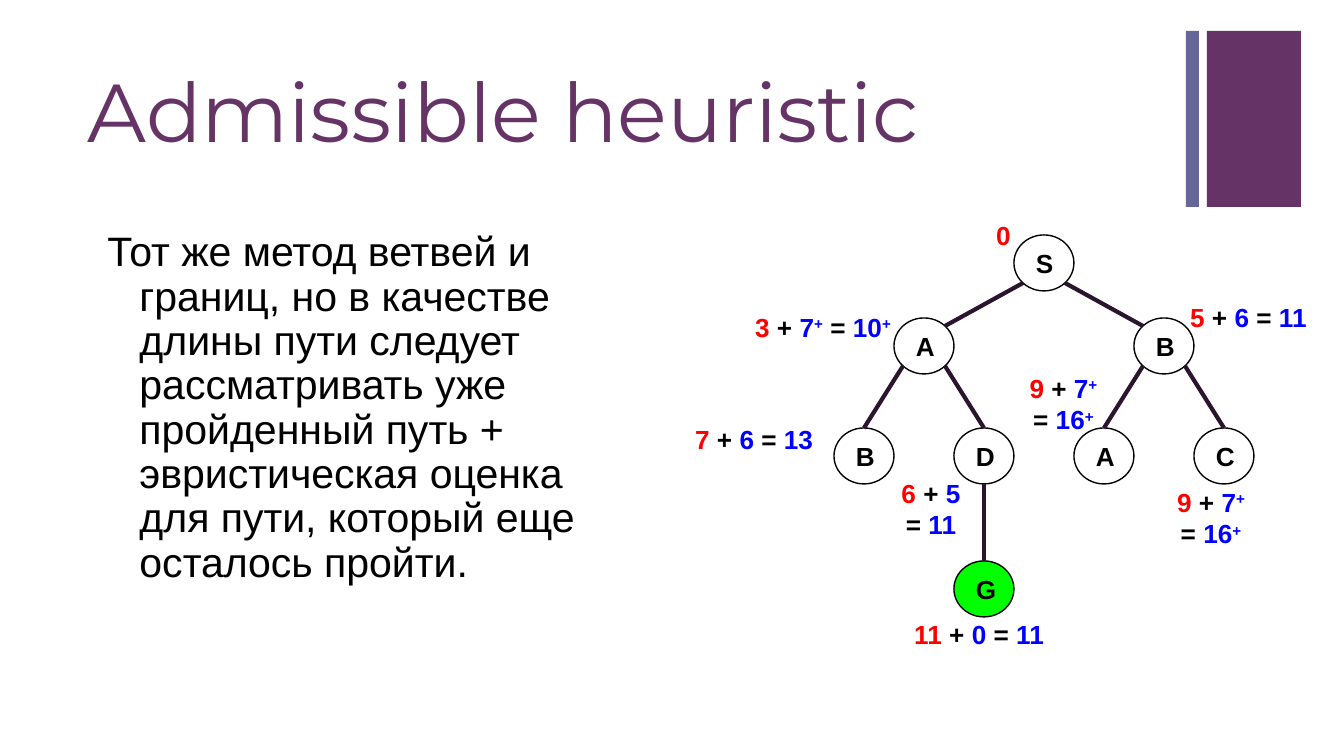
from dataclasses import dataclass

import pptx
import pptx.dml.color
import pptx.enum.shapes
import pptx.enum.text
import pptx.oxml.ns
import pptx.util
from lxml import etree

RGB = pptx.dml.color.RGBColor
PLUM = RGB(0x66, 0x33, 0x66)
SLATE = RGB(0x66, 0x66, 0x99)
EDGE = RGB(0x2B, 0x14, 0x2D)
BLACK = RGB(0, 0, 0)
WHITE = RGB(0xFF, 0xFF, 0xFF)
RED = RGB(0xFF, 0, 0)
BLUE = RGB(0, 0, 0xFF)
GREEN = RGB(0, 0xFF, 0)

SHAPE = pptx.enum.shapes.MSO_SHAPE
ALIGN = pptx.enum.text.PP_ALIGN
ANCHOR = pptx.enum.text.MSO_ANCHOR

EMU_PER_PX = 914400 / 134.4
NODE_W, NODE_H = 60, 56
STEP = 60  # half the gap between neighbouring nodes
LEFT, ROWS = 864, (263, 346, 456, 589)


@dataclass
class Node:
    name: str
    col: int
    row: int
    fill: RGB = WHITE

    @property
    def centre(self) -> tuple[int, int]:
        return LEFT + self.col * STEP, ROWS[self.row]


@dataclass
class Label:
    """Path cost so far, estimate of the rest and their sum."""
    cost: str
    estimate: str
    total: str
    x: int
    y: int
    w: int
    align: ALIGN = ALIGN.LEFT

    def runs(self) -> list[tuple[str, RGB]]:
        if not self.estimate:
            return [(self.cost, RED)]
        runs = [(self.cost, RED), (" + ", BLACK)]
        for value, after in ((self.estimate, " = "), (self.total, "")):
            runs.append((value.rstrip("+"), BLUE))
            if value.endswith("+"):
                runs.append(("+", BLUE))
            if after:
                runs.append((after, BLACK))
        return runs


NODES = [
    Node("S", 3, 0),
    Node("A", 1, 1), Node("B", 5, 1),
    Node("B", 0, 2), Node("D", 2, 2), Node("A", 4, 2), Node("C", 6, 2),
    Node("G", 2, 3, GREEN),
]
EDGES = [(0, 1), (1, 3), (1, 4), (4, 7), (0, 2), (2, 5), (2, 6)]
LABELS = [
    Label("11", "0", "11", 901, 605, 204),
    Label("7", "6", "13", 682, 410, 200),
    Label("6", "5", "11", 881, 464, 100, ALIGN.CENTER),
    Label("9", "7+", "16+", 1009, 359, 109, ALIGN.CENTER),
    Label("9", "7+", "16+", 1156, 473, 110, ALIGN.CENTER),
    Label("3", "7+", "10+", 742, 298, 182),
    Label("5", "6", "11", 1177, 288, 167),
    Label("0", "", "", 983, 206, 60),
]


def px(n: float) -> pptx.util.Emu:
    return pptx.util.Emu(round(n * EMU_PER_PX))


def box(x: int, y: int, w: int, h: int) -> tuple:
    return px(x), px(y), px(w), px(h)


def write(sp, runs, *, size=14, font="Arial", bold=True, align=ALIGN.LEFT,
          anchor=ANCHOR.TOP, spacing=None):
    """Fill a shape with (text, colour) runs; a lone plus is superscript."""
    tf = sp.text_frame
    tf.word_wrap = True
    tf.auto_size = pptx.enum.text.MSO_AUTO_SIZE.NONE
    tf.vertical_anchor = anchor
    tf.margin_left = tf.margin_right = pptx.util.Inches(0.1)
    tf.margin_top = tf.margin_bottom = pptx.util.Inches(0.1)
    p = tf.paragraphs[0]
    p.alignment = align
    p.line_spacing = spacing
    for text, color in runs:
        r = p.add_run()
        r.text = text
        r.font.size = pptx.util.Pt(size)
        r.font.name = font
        r.font.bold = bold
        r.font.color.rgb = color
        if text == "+":
            r.font._element.set("baseline", "30000")
    return p


def add_shape(slide, kind: SHAPE, place: tuple, fill: RGB, line=None):
    sp = slide.shapes.add_shape(kind, *place)
    sp.shadow.inherit = False
    sp.fill.solid()
    sp.fill.fore_color.rgb = fill
    if line is None:
        sp.line.fill.background()
    else:
        sp.line.color.rgb = line
        sp.line.width = pptx.util.Pt(0.75)
    return sp


def add_node(slide, node: Node) -> None:
    x, y = node.centre
    place = box(x - NODE_W // 2, y - NODE_H // 2, NODE_W, NODE_H)
    sp = add_shape(slide, SHAPE.OVAL, place, node.fill, BLACK)
    write(sp, [(node.name, BLACK)], align=ALIGN.CENTER, anchor=ANCHOR.MIDDLE)


def add_edge(slide, parent: Node, child: Node) -> None:
    (x1, y1), (x2, y2) = parent.centre, child.centre
    side = (x2 > x1) - (x2 < x1)
    dx, dy = round(NODE_W * 0.35), round(NODE_H * 0.35)
    # Slanted edges leave on the diagonal, vertical ones at the bottom
    x1, y1 = x1 + side * dx, y1 + (dy if side else NODE_H // 2)
    if child.row == 1:
        x2, y2 = x2 - side * dx, y2 - dy
    else:
        y2 -= NODE_H // 2
    line = slide.shapes.add_connector(
        pptx.enum.shapes.MSO_CONNECTOR.STRAIGHT, px(x1), px(y1), px(x2), px(y2))
    line.line.color.rgb = EDGE
    line.line.width = pptx.util.Pt(2.25)
    etree.SubElement(line._element.spPr, pptx.oxml.ns.qn("a:effectLst"))


def add_label(slide, label: Label) -> None:
    sp = slide.shapes.add_textbox(*box(label.x, label.y, label.w, 63))
    write(sp, label.runs(), align=label.align)


def main() -> None:
    prs = pptx.Presentation()
    prs.slide_width, prs.slide_height = px(1344), px(756)
    slide = prs.slides.add_slide(prs.slide_layouts[1])

    # Corner bars
    add_shape(slide, SHAPE.RECTANGLE, box(1207, 31, 94, 176), PLUM)
    add_shape(slide, SHAPE.RECTANGLE, box(1186, 31, 13, 176), SLATE)

    # Title and body
    title, body = slide.placeholders
    title.left, title.top, title.width, title.height = box(74, 54, 1110, 124)
    write(title, [("Admissible heuristic", PLUM)], size=44, font="Montserrat",
          bold=False, anchor=ANCHOR.MIDDLE, spacing=0.9)
    body.left, body.top, body.width, body.height = box(74, 218, 556, 474)
    text = ("Тот же метод ветвей и границ, но в качестве длины пути следует "
            "рассматривать уже пройденный путь + эвристическая оценка для пути, "
            "который еще осталось пройти.")
    p = write(body, [(text, BLACK)], size=22, bold=False, spacing=0.9)
    p.space_before = pptx.util.Pt(0)
    pPr = p._p.get_or_add_pPr()
    pPr.set("marL", str(px(52)))
    pPr.set("indent", str(px(-32)))
    etree.SubElement(pPr, pptx.oxml.ns.qn("a:buNone"))

    # Search tree
    for node in NODES:
        add_node(slide, node)
    for parent, child in EDGES:
        add_edge(slide, NODES[parent], NODES[child])
    for label in LABELS:
        add_label(slide, label)

    prs.save("out.pptx")


if __name__ == "__main__":
    main()
